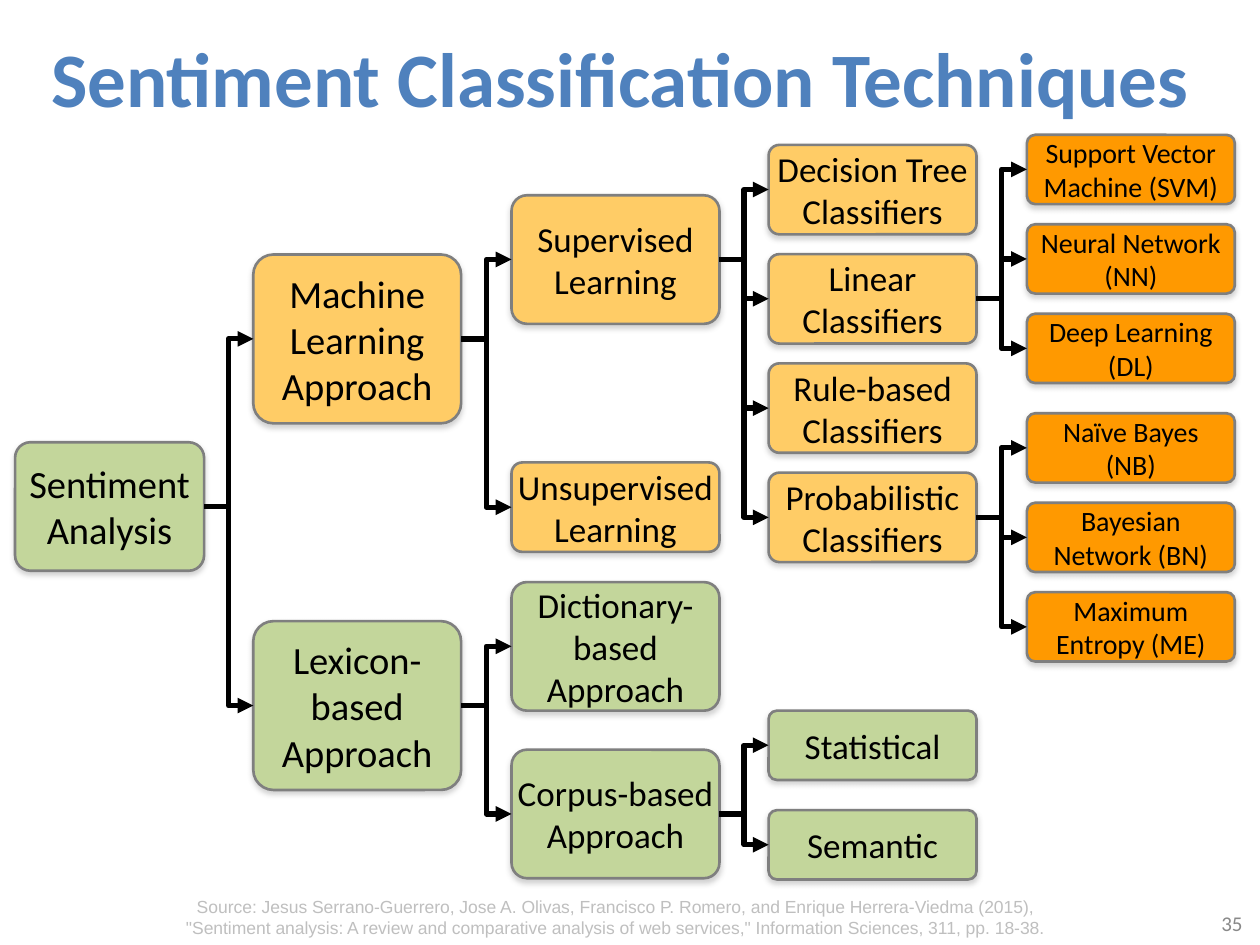
from dataclasses import dataclass

from lxml.etree import SubElement
from pptx import Presentation
from pptx.dml.color import RGBColor
from pptx.enum.shapes import MSO_CONNECTOR, MSO_SHAPE
from pptx.enum.text import MSO_ANCHOR, PP_ALIGN
from pptx.oxml.ns import qn
from pptx.util import Inches, Pt

GREEN, YELLOW, ORANGE = "C3D69B", "FFCC66", "FF9900"
COLUMN_LEFTS = [0.12, 2.01, 4.06, 6.1, 8.15]
COLUMN_SIZES = [22, 22, 20, 20, 16]
ROOT_WIDTH, BRANCH_WIDTH = 1.5, 1.65


@dataclass
class Topic:
    label: str
    color: str
    top: float
    height: float
    children: tuple = ()


def stack(labels, color, top, height, step):
    """Return childless topics at equal vertical steps."""
    return tuple(Topic(label, color, top + i * step, height)
                 for i, label in enumerate(labels))


def rgb(color):
    return RGBColor.from_string(color)


def write(frame, text, size, color="000000", font="Calibri", bold=False,
          align=PP_ALIGN.CENTER, anchor=MSO_ANCHOR.MIDDLE):
    frame.word_wrap = True
    frame.vertical_anchor = anchor
    paragraph = frame.paragraphs[0]
    paragraph.text = text
    paragraph.alignment = align
    for run in paragraph.runs:
        run.font.size = Pt(size)
        run.font.name = font
        run.font.bold = bold
        run.font.color.rgb = rgb(color)


class TreeSlide:
    outline = "7F7F7F"
    shadow = "808080"
    arrow = "000000"

    def __init__(self, slide):
        self.slide = slide

    def text(self, text, left, top, width, height, size, **style):
        field = self.slide.shapes.add_textbox(
            Inches(left), Inches(top), Inches(width), Inches(height))
        write(field.text_frame, text, size, **style)

    def box(self, topic, column):
        width = BRANCH_WIDTH if column else ROOT_WIDTH
        box = self.slide.shapes.add_shape(
            MSO_SHAPE.ROUNDED_RECTANGLE, Inches(COLUMN_LEFTS[column]),
            Inches(topic.top), Inches(width), Inches(topic.height))
        box.adjustments[0] = 0.12
        box.fill.solid()
        box.fill.fore_color.rgb = rgb(topic.color)
        box.line.color.rgb = rgb(self.outline)
        box.line.width = Pt(1.5)
        self.soft_shadow(box)
        frame = box.text_frame
        frame.margin_left = frame.margin_right = 0
        frame.margin_top = frame.margin_bottom = 0
        write(frame, topic.label, COLUMN_SIZES[column])
        return box

    def soft_shadow(self, box):
        box.shadow.inherit = False
        effects = box.element.spPr.find(qn("a:effectLst"))
        outer = SubElement(effects, qn("a:outerShdw"), blurRad=str(Pt(3.1)),
                           dist=str(Pt(1.8)), dir="5400000", rotWithShape="0")
        tint = SubElement(outer, qn("a:srgbClr"), val=self.shadow)
        SubElement(tint, qn("a:alpha"), val="35000")

    def link(self, parent, child):
        link = self.slide.shapes.add_connector(MSO_CONNECTOR.ELBOW, 0, 0, 0, 0)
        link.begin_connect(parent, 3)
        link.end_connect(child, 1)
        link.line.color.rgb = rgb(self.arrow)
        link.line.width = Pt(3)
        SubElement(link.line._get_or_add_ln(), qn("a:tailEnd"), type="triangle")
        SubElement(link.element.spPr, qn("a:effectLst"))

    def tree(self, topic, column=0):
        """Draw a topic with all its descendants and return its box."""
        parent = self.box(topic, column)
        for child in topic.children:
            self.link(parent, self.tree(child, column + 1))
        return parent


def sentiment_topics():
    linear = stack(["Support Vector Machine (SVM)", "Neural Network (NN)",
                    "Deep Learning (DL)"], ORANGE, 1.07, 0.55, 0.71)
    probabilistic = stack(["Naïve Bayes\n(NB)", "Bayesian Network (BN)",
                           "Maximum Entropy (ME)"], ORANGE, 3.28, 0.55, 0.71)
    classifiers = stack(["Decision Tree Classifiers", "Linear Classifiers",
                         "Rule-based Classifiers", "Probabilistic Classifiers"],
                        YELLOW, 1.15, 0.71, 0.867)
    classifiers[1].children = linear
    classifiers[3].children = probabilistic
    corpus = stack(["Statistical", "Semantic"], GREEN, 5.64, 0.55, 0.79)

    machine_learning = Topic("Machine Learning Approach", YELLOW, 2.02, 1.34, (
        Topic("Supervised Learning", YELLOW, 1.55, 1.02, classifiers),
        Topic("Unsupervised Learning", YELLOW, 3.67, 0.71)))
    lexicon = Topic("Lexicon-based Approach", GREEN, 4.93, 1.34, (
        Topic("Dictionary-based Approach", GREEN, 4.62, 1.02),
        Topic("Corpus-based Approach", GREEN, 5.95, 1.02, corpus)))
    return Topic("Sentiment Analysis", GREEN, 3.51, 1.02,
                 (machine_learning, lexicon))


def main():
    deck = Presentation()
    deck.slide_width, deck.slide_height = Inches(10), Inches(7.5)
    page = TreeSlide(deck.slides.add_slide(deck.slide_layouts[6]))
    page.text("Sentiment Classification Techniques", 0.2, 0.13, 9.45, 0.95, 44,
              color="4F81BD", bold=True)
    page.text("35", 7.63, 7.13, 2.33, 0.4, 12, color="898989",
              align=PP_ALIGN.RIGHT)
    page.text("Source: Jesus Serrano-Guerrero, Jose A. Olivas, Francisco P. "
              "Romero, and Enrique Herrera-Viedma (2015),\n"
              "\"Sentiment analysis: A review and comparative analysis of web "
              "services,\" Information Sciences, 311, pp. 18-38.",
              0.59, 7.06, 8.58, 0.44, 10, color="BFBFBF", font="Arial",
              anchor=MSO_ANCHOR.TOP)
    page.tree(sentiment_topics())
    deck.save("out.pptx")


if __name__ == "__main__":
    main()
